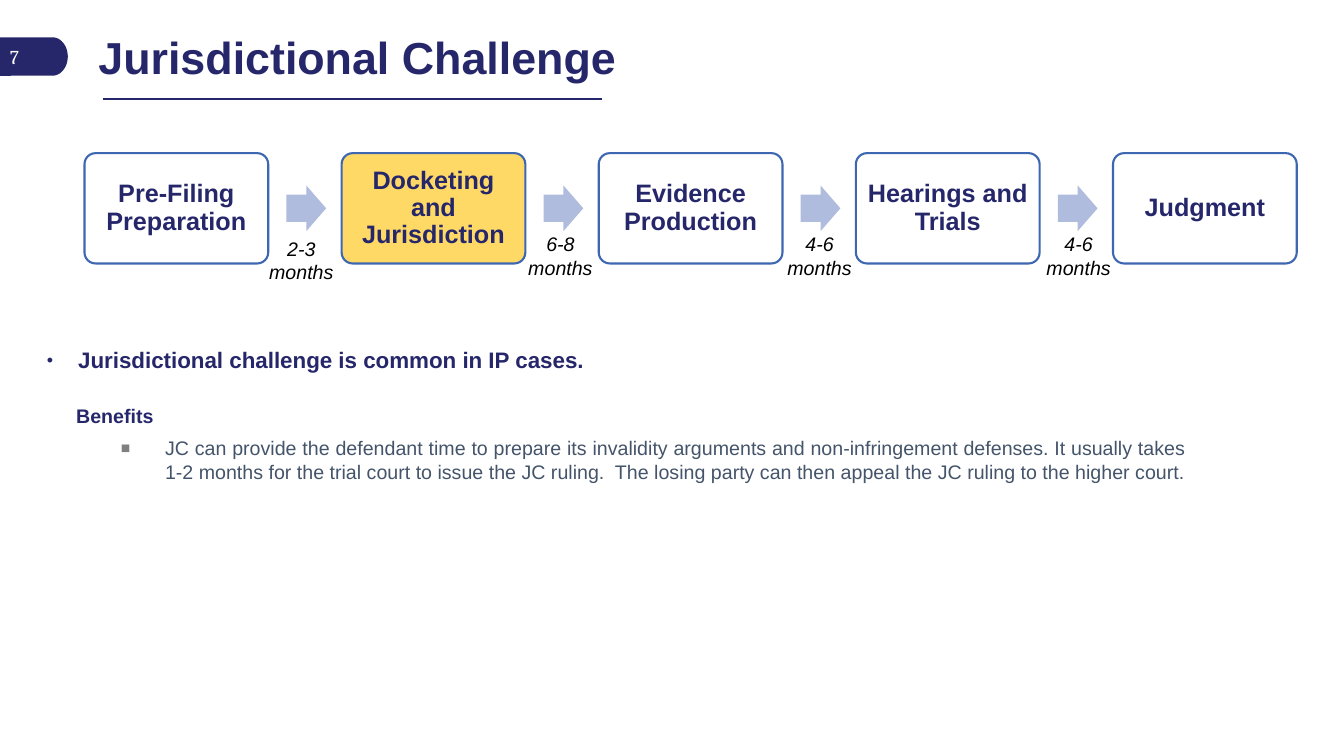
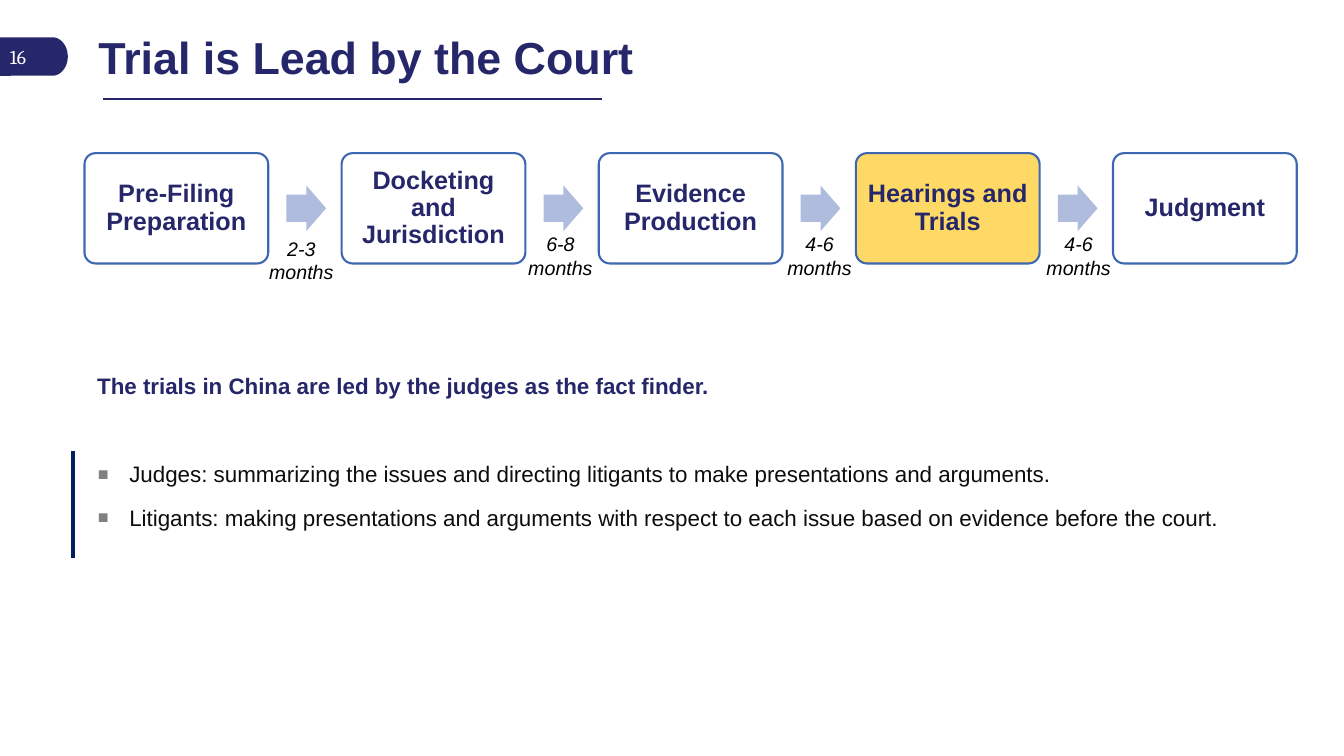
import math
from dataclasses import dataclass

from lxml import etree
from pptx import Presentation
from pptx.dml.color import RGBColor
from pptx.enum import shapes, text
from pptx.oxml import ns
from pptx.util import Cm, Pt

# Colours and fonts
NAVY = RGBColor(0x26, 0x27, 0x6A)
DEEP_BLUE = RGBColor(0x00, 0x20, 0x60)
OUTLINE = RGBColor(0x3E, 0x67, 0xB2)
ARROW = RGBColor(0xB0, 0xBC, 0xDE)
HIGHLIGHT = RGBColor(0xFF, 0xD9, 0x66)
SLATE = RGBColor(0x44, 0x54, 0x6A)
NEAR_BLACK = RGBColor(0x0D, 0x0D, 0x0D)
GREY = RGBColor(0x80, 0x80, 0x80)
BLACK = RGBColor(0, 0, 0)
WHITE = RGBColor(0xFF, 0xFF, 0xFF)
BODY_FONT = "Arial"
NUMBER_FONT = "Cambria"

CENTER = text.PP_ALIGN.CENTER
JUSTIFY = text.PP_ALIGN.JUSTIFY
MIDDLE = text.MSO_ANCHOR.MIDDLE

# Process row geometry, in centimetres
STAGE_LEFT, STAGE_TOP, STAGE_WIDTH, STAGE_HEIGHT = 2.13, 3.86, 4.63, 2.78
STAGE_PITCH = 6.48
ARROW_OFFSET, ARROW_WIDTH, ARROW_HEIGHT = 5.09, 1, 1.15
WAIT_PITCH, WAIT_WIDTH, WAIT_HEIGHT = 6.53, 2.13, 1.45


@dataclass(frozen=True)
class Stage:
    name: str
    wait: str = ""  # months until the next stage
    wait_top: float = 5.72


@dataclass(frozen=True)
class Bullet:
    symbol: str
    color: RGBColor


STAGES = (
    Stage("Pre-Filing Preparation", "2-3", 5.84),
    Stage("Docketing and Jurisdiction", "6-8"),
    Stage("Evidence Production", "4-6"),
    Stage("Hearings and Trials", "4-6"),
    Stage("Judgment"),
)
DOT = Bullet("•", NAVY)
SQUARE = Bullet("■", GREY)


# Text
def write(frame, content: str, *, size: float, color: RGBColor = NAVY,
          font: str = BODY_FONT, bold: bool = False, italic: bool = False,
          align=None, left: float = 0, hanging: float = 0, line_spacing=None,
          after: float = 0, bullet: Bullet | None = None) -> None:
    """Add one paragraph; left and hanging are indents in centimetres."""
    paragraph = frame.add_paragraph() if frame.text else frame.paragraphs[0]
    properties = paragraph._p.get_or_add_pPr()
    properties.set("marL", str(Cm(left)))
    properties.set("indent", str(-Cm(hanging)))
    if bullet:
        bullet_color = etree.SubElement(properties, ns.qn("a:buClr"))
        etree.SubElement(bullet_color, ns.qn("a:srgbClr"), val=str(bullet.color))
        etree.SubElement(properties, ns.qn("a:buSzPct"), val="80000")
        etree.SubElement(properties, ns.qn("a:buFont"), typeface=BODY_FONT)
        etree.SubElement(properties, ns.qn("a:buChar"), char=bullet.symbol)
    paragraph.alignment = align
    paragraph.line_spacing = line_spacing
    paragraph.space_after = Pt(after)
    run = paragraph.add_run()
    run.text = content
    run.font.name = font
    run.font.size = Pt(size)
    run.font.bold = bold
    run.font.italic = italic
    run.font.color.rgb = color


def add_text_box(slide, left: float, top: float, width: float, height: float,
                 wrap: bool = True):
    box = slide.shapes.add_textbox(Cm(left), Cm(top), Cm(width), Cm(height))
    box.text_frame.word_wrap = wrap
    return box.text_frame


# Shapes
def paint(shape, fill: RGBColor, outline: RGBColor | None = None) -> None:
    shape.shadow.inherit = False
    shape.fill.solid()
    shape.fill.fore_color.rgb = fill
    if outline is None:
        shape.line.fill.background()
    else:
        shape.line.color.rgb = outline
        shape.line.width = Pt(1.5)


def add_line(slide, x1: float, y1: float, x2: float, y2: float,
             color: RGBColor, width: float) -> None:
    line = slide.shapes.add_connector(
        shapes.MSO_CONNECTOR.STRAIGHT, Cm(x1), Cm(y1), Cm(x2), Cm(y2))
    line.line.color.rgb = color
    line.line.width = Pt(width)
    etree.SubElement(line._element.spPr, ns.qn("a:effectLst"))


def add_number_tab(slide, number: int) -> None:
    top, height, straight, bulge, steps = 0.94, 0.97, 1.32, 0.39, 24
    radius = height / 2
    angles = [math.pi * (step / steps - 0.5) for step in range(steps + 1)]
    curve = [(Cm(straight + bulge * math.cos(angle)),
              Cm(top + radius + radius * math.sin(angle))) for angle in angles]
    builder = slide.shapes.build_freeform(0, Cm(top))
    builder.add_line_segments([*curve, (0, Cm(top + height))], close=True)
    tab = builder.convert_to_shape()
    paint(tab, NAVY)
    tab.text_frame.vertical_anchor = MIDDLE
    write(tab.text_frame, str(number), size=14, color=WHITE, font=NUMBER_FONT,
          align=text.PP_ALIGN.LEFT)


def add_stage(slide, stage: Stage, left: float, active: bool) -> None:
    box = slide.shapes.add_shape(
        shapes.MSO_SHAPE.ROUNDED_RECTANGLE,
        Cm(left), Cm(STAGE_TOP), Cm(STAGE_WIDTH), Cm(STAGE_HEIGHT))
    box.adjustments[0] = 0.1
    paint(box, HIGHLIGHT if active else WHITE, OUTLINE)
    frame = box.text_frame
    frame.word_wrap = True
    frame.vertical_anchor = MIDDLE
    frame.margin_left = frame.margin_right = Cm(0.18)
    frame.margin_top = frame.margin_bottom = Cm(0.18)
    write(frame, stage.name, size=18, bold=True, align=CENTER, line_spacing=0.9)


def add_arrow(slide, left: float) -> None:
    top = STAGE_TOP + (STAGE_HEIGHT - ARROW_HEIGHT) / 2
    arrow = slide.shapes.add_shape(
        shapes.MSO_SHAPE.RIGHT_ARROW,
        Cm(left), Cm(top), Cm(ARROW_WIDTH), Cm(ARROW_HEIGHT))
    arrow.adjustments[0] = 0.6
    arrow.adjustments[1] = 0.5
    paint(arrow, ARROW)


def add_process(slide, active: str) -> None:
    for index, stage in enumerate(STAGES):
        left = STAGE_LEFT + index * STAGE_PITCH
        add_stage(slide, stage, left, stage.name == active)
        if stage.wait:
            add_arrow(slide, left + ARROW_OFFSET)
            frame = add_text_box(slide, (index + 1) * WAIT_PITCH, stage.wait_top,
                                 WAIT_WIDTH, WAIT_HEIGHT, wrap=False)
            for line in (stage.wait, "months"):
                write(frame, line, size=14, color=BLACK, italic=True, align=CENTER)


# Slides
def add_process_slide(presentation, number: int, title: str, active: str):
    slide = presentation.slides.add_slide(presentation.slide_layouts[6])
    add_line(slide, 2.59, 2.49, 15.16, 2.49, NAVY, 1.5)
    add_number_tab(slide, number)
    frame = add_text_box(slide, 1.57, 0.66, 32.28, 1.68)
    frame.vertical_anchor = MIDDLE
    write(frame, title, size=32, bold=True, left=0.66, line_spacing=0.9)
    add_process(slide, active)
    return slide


def add_jurisdiction_slide(presentation) -> None:
    slide = add_process_slide(presentation, 7, "Jurisdictional Challenge",
                              "Docketing and Jurisdiction")
    frame = add_text_box(slide, 0.61, 8.61, 30.45, 1.1)
    write(frame, "Jurisdictional challenge is common in IP cases.", size=16,
          bold=True, left=1.11, hanging=0.79, bullet=DOT)
    frame = add_text_box(slide, 1.37, 10.06, 28.78, 2.26)
    write(frame, "Benefits", size=14, bold=True, align=JUSTIFY, left=0.3, after=6)
    write(frame, "JC can provide the defendant time to prepare its invalidity "
          "arguments and non-infringement defenses. It usually takes 1-2 months "
          "for the trial court to issue the JC ruling.  The losing party can "
          "then appeal the JC ruling to the higher court.",
          size=14, color=SLATE, align=JUSTIFY, left=2.54, hanging=1.11,
          bullet=SQUARE)


def add_trial_slide(presentation) -> None:
    slide = add_process_slide(presentation, 16, "Trial is Lead by the Court",
                              "Hearings and Trials")
    frame = add_text_box(slide, 1.9, 9.25, 30.5, 5.38)
    write(frame, "The trials in China are led by the judges as the fact finder.",
          size=16, bold=True, align=JUSTIFY, left=0.3, after=44)
    for duty in (
        "Judges: summarizing the issues and directing litigants to make "
        "presentations and arguments.",
        "Litigants: making presentations and arguments with respect to each "
        "issue based on evidence before the court.",
    ):
        write(frame, duty, size=16, color=NEAR_BLACK, align=JUSTIFY, left=1.11,
              hanging=0.79, after=12, bullet=SQUARE)
    add_line(slide, 1.84, 11.37, 1.84, 14.05, DEEP_BLUE, 2.25)


def main() -> None:
    presentation = Presentation()
    presentation.slide_width = Cm(33.87)
    presentation.slide_height = Cm(19.05)
    add_jurisdiction_slide(presentation)
    add_trial_slide(presentation)
    presentation.save("out.pptx")


if __name__ == "__main__":
    main()
